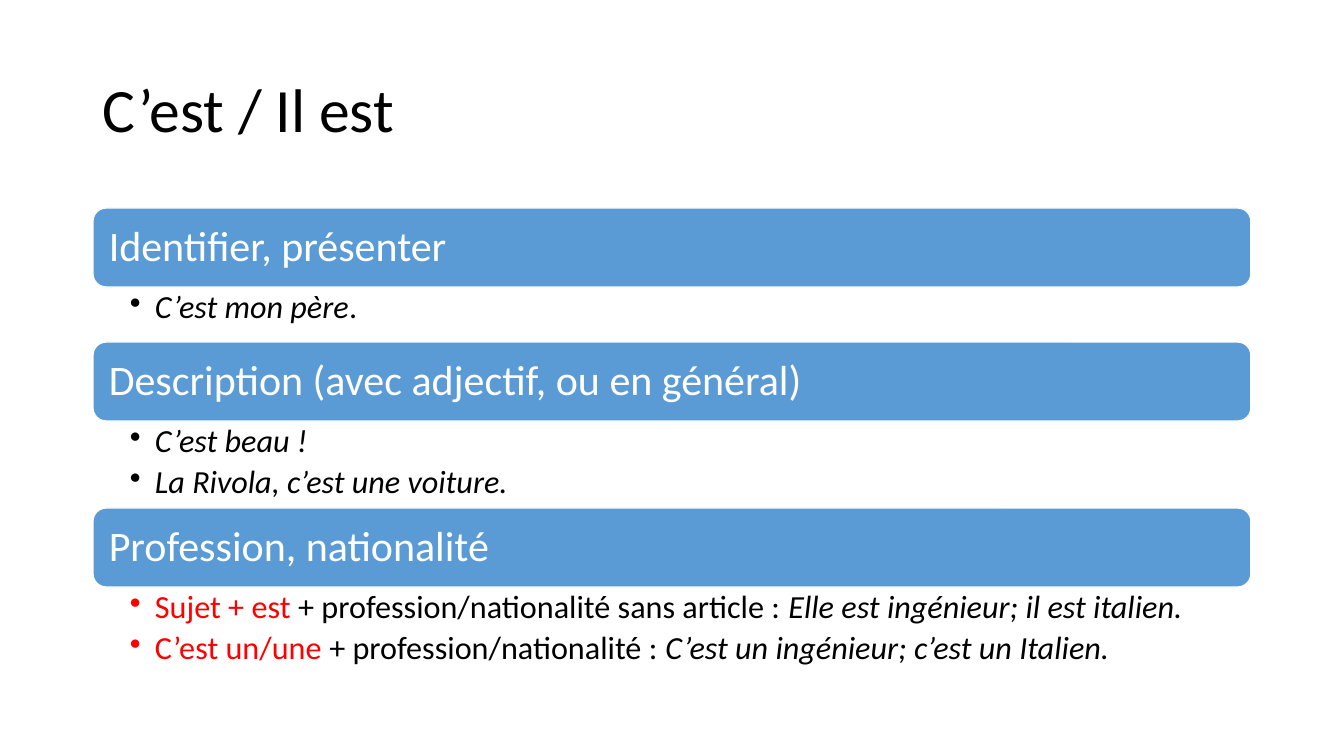
"""Build a French grammar slide on the uses of "c'est" and "il est"."""
from lxml import etree
from pptx import Presentation
from pptx import util as u
from pptx.dml.color import RGBColor
from pptx.enum import shapes, text
from pptx.oxml.ns import qn

PX = 914400 / 100.8
BLACK, WHITE, RED, BLUE = "000000", "FFFFFF", "FF0000", "5B9BD5"
LEFT, WIDTH = 93, 1158
BAR_HEIGHT = 79
INDENT = 25


def color(value):
    return RGBColor.from_string(value)


def write(frame, runs, size, fill=BLACK, margins=(10, 5, 10, 5), anchor="MIDDLE",
          first=True, bullet=False, after=0):
    frame.word_wrap = True
    frame.vertical_anchor = getattr(text.MSO_ANCHOR, anchor)
    (frame.margin_left, frame.margin_top,
     frame.margin_right, frame.margin_bottom) = [round(m * PX) for m in margins]
    paragraph = frame.paragraphs[0] if first else frame.add_paragraph()
    paragraph.alignment = text.PP_ALIGN.LEFT
    paragraph.line_spacing = 0.9
    paragraph.space_after = u.Pt(after)
    if bullet:
        properties = paragraph._p.get_or_add_pPr()
        properties.set("marL", str(round(INDENT * PX)))
        properties.set("indent", str(round(-INDENT * PX)))
        etree.SubElement(properties, qn("a:buChar")).set("char", "•")
    for words, style in runs:
        run = paragraph.add_run()
        run.text = words
        run.font.name = "Calibri"
        run.font.size = u.Pt(size)
        run.font.italic = style == "italic"
        run.font.color.rgb = color(RED if style == "red" else fill)


presentation = Presentation()
presentation.slide_width = round(1344 * PX)
presentation.slide_height = round(756 * PX)
slide = presentation.slides.add_slide(presentation.slide_layouts[6])

title = slide.shapes.add_textbox(*[round(v * PX) for v in (LEFT, 40, WIDTH, 146)])
write(title.text_frame, [("C’est / Il est", "plain")], size=44)

sections = [
    ("Identifier, présenter", 55, [
        [("C’est mon père", "italic"), (".", "plain")],
    ]),
    ("Description (avec adjectif, ou en général)", 87, [
        [("C’est beau !", "italic")],
        [("La Rivola, c’est une voiture.", "italic")],
    ]),
    ("Profession, nationalité", 87, [
        [("Sujet + est ", "red"),
         ("+ profession/nationalité sans article : ", "plain"),
         ("Elle est ingénieur; il est italien.", "italic")],
        [("C’est un/une ", "red"),
         ("+ profession/nationalité : ", "plain"),
         ("C’est un ingénieur; c’est un Italien.", "italic")],
    ]),
]

top = 208
for heading, body_height, examples in sections:
    bar = slide.shapes.add_shape(
        shapes.MSO_SHAPE.ROUNDED_RECTANGLE,
        *[round(v * PX) for v in (LEFT, top, WIDTH, BAR_HEIGHT)])
    bar.shadow.inherit = False
    bar.fill.solid()
    bar.fill.fore_color.rgb = color(BLUE)
    bar.line.color.rgb = color(WHITE)
    bar.line.width = u.Pt(1)
    write(bar.text_frame, [(heading, "plain")], size=30, fill=WHITE,
          margins=(12, 12, 12, 12))
    top += BAR_HEIGHT

    body = slide.shapes.add_textbox(
        *[round(v * PX) for v in (LEFT, top, WIDTH, body_height)])
    for index, runs in enumerate(examples):
        write(body.text_frame, runs, size=23, margins=(37, 4, 23, 4), anchor="TOP",
              first=index == 0, bullet=True, after=4.6)
    top += body_height

presentation.save("out.pptx")
